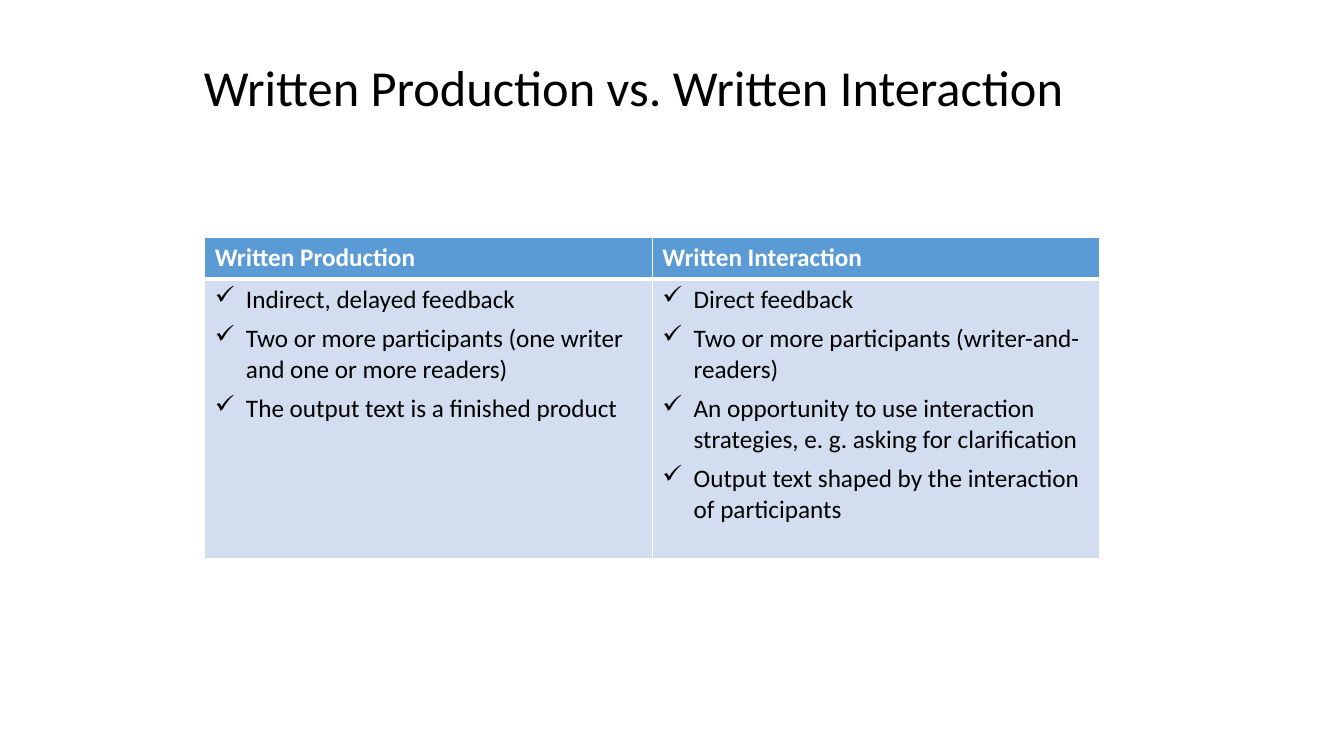
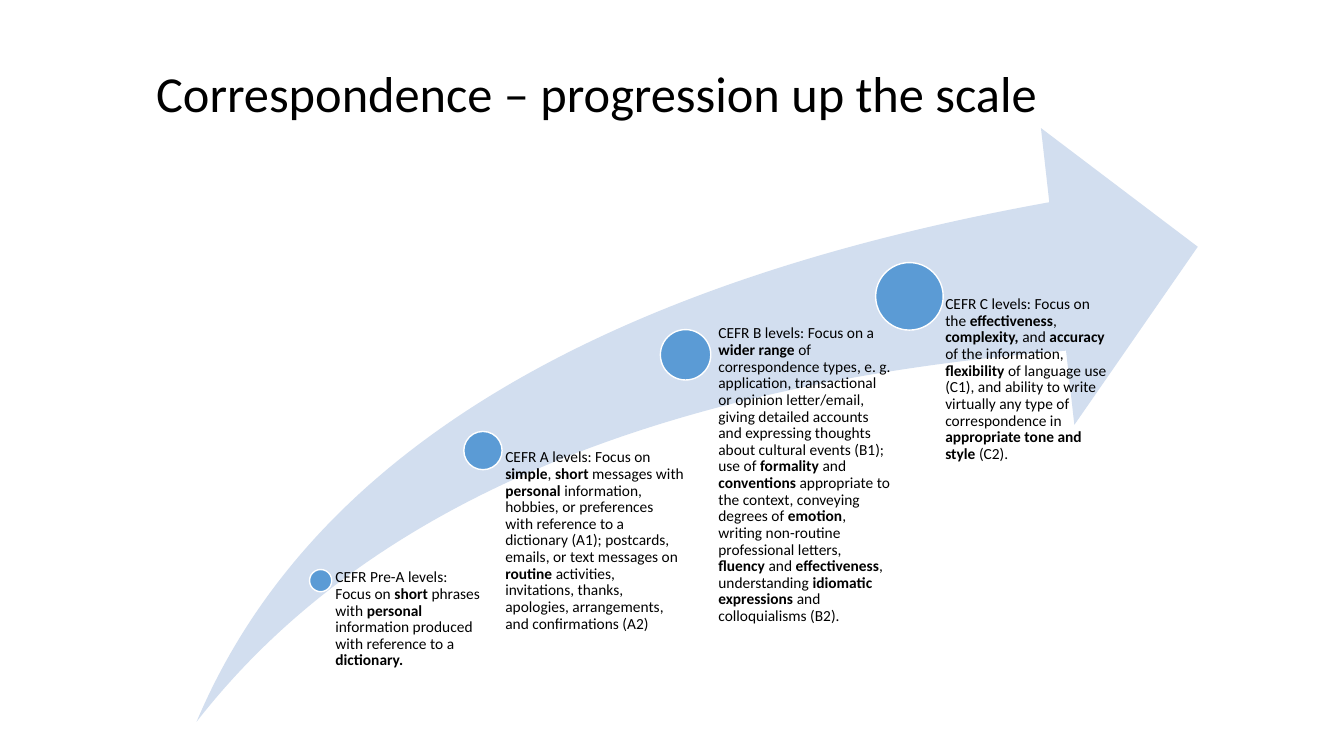
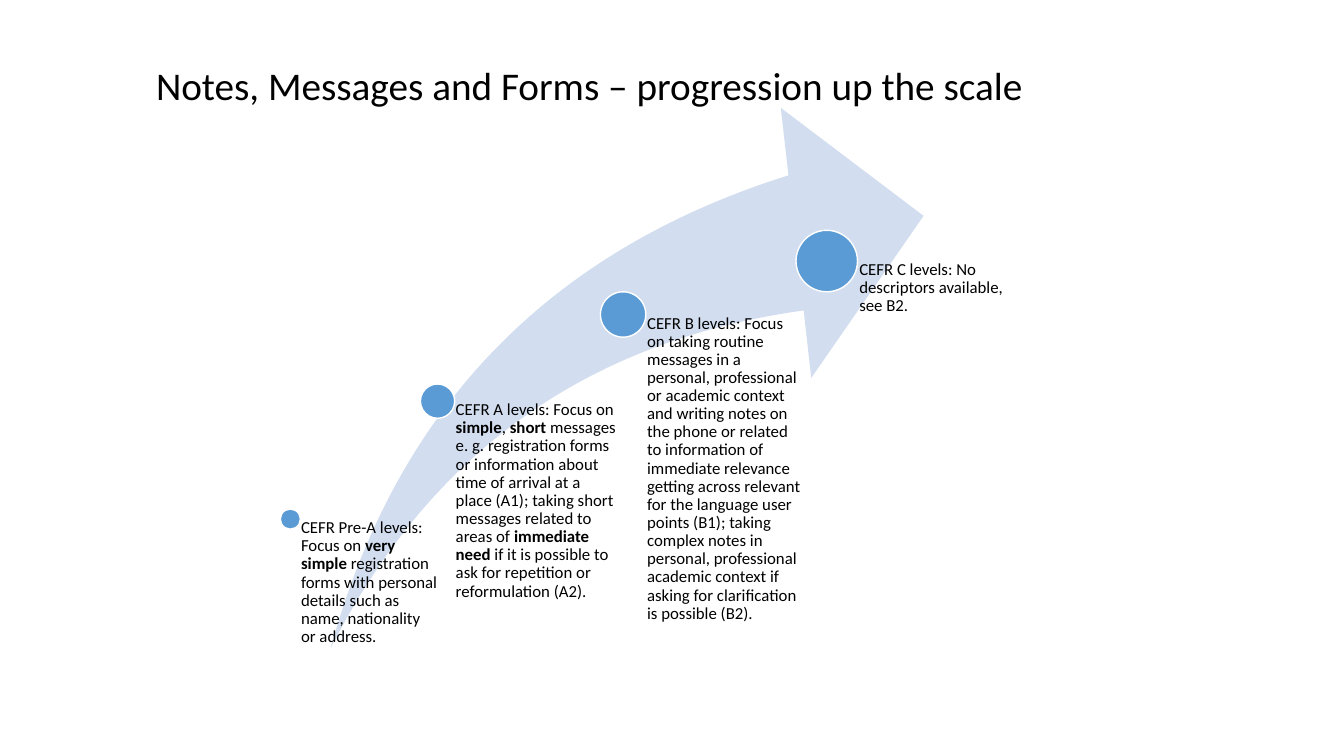
from dataclasses import dataclass

from lxml.etree import SubElement
from pptx import Presentation
from pptx.dml.color import RGBColor
from pptx.enum.shapes import MSO_SHAPE
from pptx.enum.text import MSO_ANCHOR, PP_ALIGN
from pptx.oxml.ns import qn
from pptx.util import Inches, Pt

COLORS = {"text": "000000", "white": "FFFFFF", "accent": "5B9BD5", "pale": "D2DEEF"}
FONT = "Calibri"
LINE_SPACING = 0.9
INSET_PER_DIAMETER = 0.53


@dataclass
class Title:
    text: str
    left: float
    top: float
    width: float
    height: float
    size: int
    align: PP_ALIGN = PP_ALIGN.LEFT
    line_spacing: float = LINE_SPACING


@dataclass
class Level:
    """A dot on the arrow and its label; ** encloses bold words."""
    center_x: float
    center_y: float
    diameter: float
    width: float
    height: float
    text: str
    shift_x: float = 0
    shift_y: float = 0


@dataclass
class Progression:
    title: Title
    arrow: tuple[float, float, float, float]
    label_size: int
    levels: list[Level]


@dataclass
class Column:
    heading: str
    points: list[str]


COMPARISON_TITLE = Title("Written Production vs. Written Interaction",
                         0.97, 0.31, 10.63, 0.9, 36, PP_ALIGN.CENTER, 1.0)
COMPARISON = [
    Column("Written Production", [
        "Indirect, delayed feedback",
        "Two or more participants (one writer and one or more readers)",
        "The output text is a finished product",
    ]),
    Column("Written Interaction", [
        "Direct feedback",
        "Two or more participants (writer-and-readers)",
        "An opportunity to use interaction strategies, e. g. asking for clarification",
        "Output text shaped by the interaction of participants",
    ]),
]

PROGRESSIONS = [
    Progression(
        Title("Correspondence – progression up the scale", 1.45, 0.48, 9.87, 0.79, 36),
        (1.95, 1.27, 9.93, 5.89), 11,
        [
            Level(3.18, 5.76, 0.22, 1.61, 0.98,
                  "CEFR Pre-A levels: Focus on **short** phrases with **personal** "
                  "information produced with reference to a **dictionary.**",
                  0.03, -0.11),
            Level(4.79, 4.47, 0.38, 1.98, 2.1,
                  "CEFR A levels: Focus on **simple**, **short** messages with "
                  "**personal** information, hobbies, or preferences with reference to "
                  "a dictionary (A1); postcards, emails, or text messages on "
                  "**routine** activities, invitations, thanks, apologies, "
                  "arrangements, and confirmations (A2)",
                  0.02, -0.01),
            Level(6.8, 3.52, 0.5, 1.98, 3.11,
                  "CEFR B levels: Focus on a **wider range **of correspondence types, "
                  "e. g. application, transactional or opinion letter/email, giving "
                  "detailed accounts and expressing thoughts about cultural events "
                  "(B1); use of **formality** and **conventions** appropriate to the "
                  "context, conveying degrees of **emotion**, writing non-routine "
                  "professional letters, **fluency** and **effectiveness**, "
                  "understanding **idiomatic expressions** and colloquialisms (B2).",
                  0.06, -0.29),
            Level(9.02, 2.94, 0.67, 1.98, 4.22,
                  "CEFR C levels: Focus on the **effectiveness**, **complexity,** and "
                  "**accuracy** of the information, **flexibility** of language use "
                  "(C1), and ability to write virtually any type of correspondence in "
                  "**appropriate tone and style **(C2)."),
        ]),
    Progression(
        Title("Notes, Messages and Forms – progression up the scale",
              1.45, 0.34, 9.87, 0.79, 28),
        (3.28, 1.07, 5.88, 5.36), 12,
        [
            Level(2.88, 5.15, 0.2, 1.47, 1.28,
                  "CEFR Pre-A levels: Focus on **very simple** registration forms with "
                  "personal details such as name, nationality or address."),
            Level(4.34, 3.98, 0.34, 1.8, 2.45,
                  "CEFR A levels: Focus on **simple**, **short** messages e. g. "
                  "registration forms or information about time of arrival at a place "
                  "(A1); taking short messages related to areas of **immediate need** "
                  "if it is possible to ask for repetition or reformulation (A2)."),
            Level(6.18, 3.12, 0.45, 1.8, 3.31,
                  "CEFR B levels: Focus on taking routine messages in a personal, "
                  "professional or academic context and writing notes on the phone or "
                  "related to information of immediate relevance getting across "
                  "relevant for the language user points (B1); taking complex notes in "
                  "personal, professional academic context if asking for clarification "
                  "is possible (B2)."),
            Level(8.2, 2.59, 0.61, 1.8, 3.84,
                  "CEFR C levels: No descriptors available, see B2."),
        ]),
]


def rgb(name: str) -> RGBColor:
    return RGBColor.from_string(COLORS[name])


def style(paragraph, size: int, color: str = "text", bold: bool = False) -> None:
    font = paragraph.font
    font.name, font.size, font.bold = FONT, Pt(size), bold
    font.color.rgb = rgb(color)


def add_title(slide, title: Title) -> None:
    box = slide.shapes.add_textbox(Inches(title.left), Inches(title.top),
                                   Inches(title.width), Inches(title.height))
    frame = box.text_frame
    frame.word_wrap = True
    frame.vertical_anchor = MSO_ANCHOR.BOTTOM
    heading = frame.paragraphs[0]
    heading.text = title.text
    heading.alignment = title.align
    heading.line_spacing = title.line_spacing
    style(heading, title.size)


def add_filled(slide, preset: MSO_SHAPE, left: float, top: float,
               width: float, height: float, color: str):
    shape = slide.shapes.add_shape(preset, Inches(left), Inches(top),
                                   Inches(width), Inches(height))
    shape.shadow.inherit = False
    shape.fill.solid()
    shape.fill.fore_color.rgb = rgb(color)
    shape.line.fill.background()
    return shape


def add_level(slide, level: Level, size: int) -> None:
    radius = level.diameter / 2
    dot = add_filled(slide, MSO_SHAPE.OVAL, level.center_x - radius,
                     level.center_y - radius, level.diameter, level.diameter, "accent")
    dot.line.color.rgb = rgb("white")
    dot.line.width = Pt(1)

    label = slide.shapes.add_textbox(
        Inches(level.center_x + level.shift_x), Inches(level.center_y + level.shift_y),
        Inches(level.width), Inches(level.height))
    frame = label.text_frame
    frame.word_wrap = True
    frame.margin_left = Inches(level.diameter * INSET_PER_DIAMETER)
    frame.margin_top = frame.margin_right = frame.margin_bottom = 0
    description = frame.paragraphs[0]
    description.line_spacing = LINE_SPACING
    style(description, size)
    for index, words in enumerate(level.text.split("**")):
        if words:
            run = description.add_run()
            run.text = words
            if index % 2:
                run.font.bold = True


def add_progression(slide, progression: Progression) -> None:
    add_title(slide, progression.title)
    arrow = add_filled(slide, MSO_SHAPE.SWOOSH_ARROW, *progression.arrow, "pale")
    arrow.adjustments[0] = arrow.adjustments[1] = 0.25
    for level in progression.levels:
        add_level(slide, level, progression.label_size)


def format_cell(cell, fill: str, top: int, bottom: int) -> None:
    """Draw white borders, widths in points, and then the fill."""
    properties = cell._tc.get_or_add_tcPr()
    for edge, width in (("L", 1), ("R", 1), ("T", top), ("B", bottom)):
        line = SubElement(properties, qn(f"a:ln{edge}"), w=str(Pt(width)))
        solid = SubElement(line, qn("a:solidFill"))
        SubElement(solid, qn("a:srgbClr"), val=COLORS["white"])
    cell.fill.solid()
    cell.fill.fore_color.rgb = rgb(fill)


def add_check(paragraph) -> None:
    properties = paragraph._p.get_or_add_pPr()
    properties.set("marL", str(Inches(0.31)))
    properties.set("indent", str(-Inches(0.31)))
    SubElement(properties, qn("a:buChar"), char="✓")


def add_comparison(slide, columns: list[Column]) -> None:
    add_title(slide, COMPARISON_TITLE)
    table = slide.shapes.add_table(2, len(columns), Inches(2.03), Inches(2.36),
                                   Inches(8.88), Inches(3.18)).table
    table.rows[0].height, table.rows[1].height = Inches(0.41), Inches(2.77)
    for index, column in enumerate(columns):
        table.columns[index].width = Inches(4.44)
        head, body = table.cell(0, index), table.cell(1, index)
        format_cell(head, "accent", 1, 3)
        format_cell(body, "pale", 3, 1)
        head.text = column.heading
        style(head.text_frame.paragraphs[0], 18, "white", bold=True)
        body.text = "\n".join(column.points)
        for number, point in enumerate(body.text_frame.paragraphs):
            if number:
                point.space_before = Pt(6)
            add_check(point)
            style(point, 18)


def main() -> None:
    presentation = Presentation()
    presentation.slide_width, presentation.slide_height = Inches(13.33), Inches(7.5)
    blank = presentation.slide_layouts[6]

    # Comparison table
    add_comparison(presentation.slides.add_slide(blank), COMPARISON)

    # Progression arrows
    for progression in PROGRESSIONS:
        add_progression(presentation.slides.add_slide(blank), progression)

    presentation.save("out.pptx")


if __name__ == "__main__":
    main()
